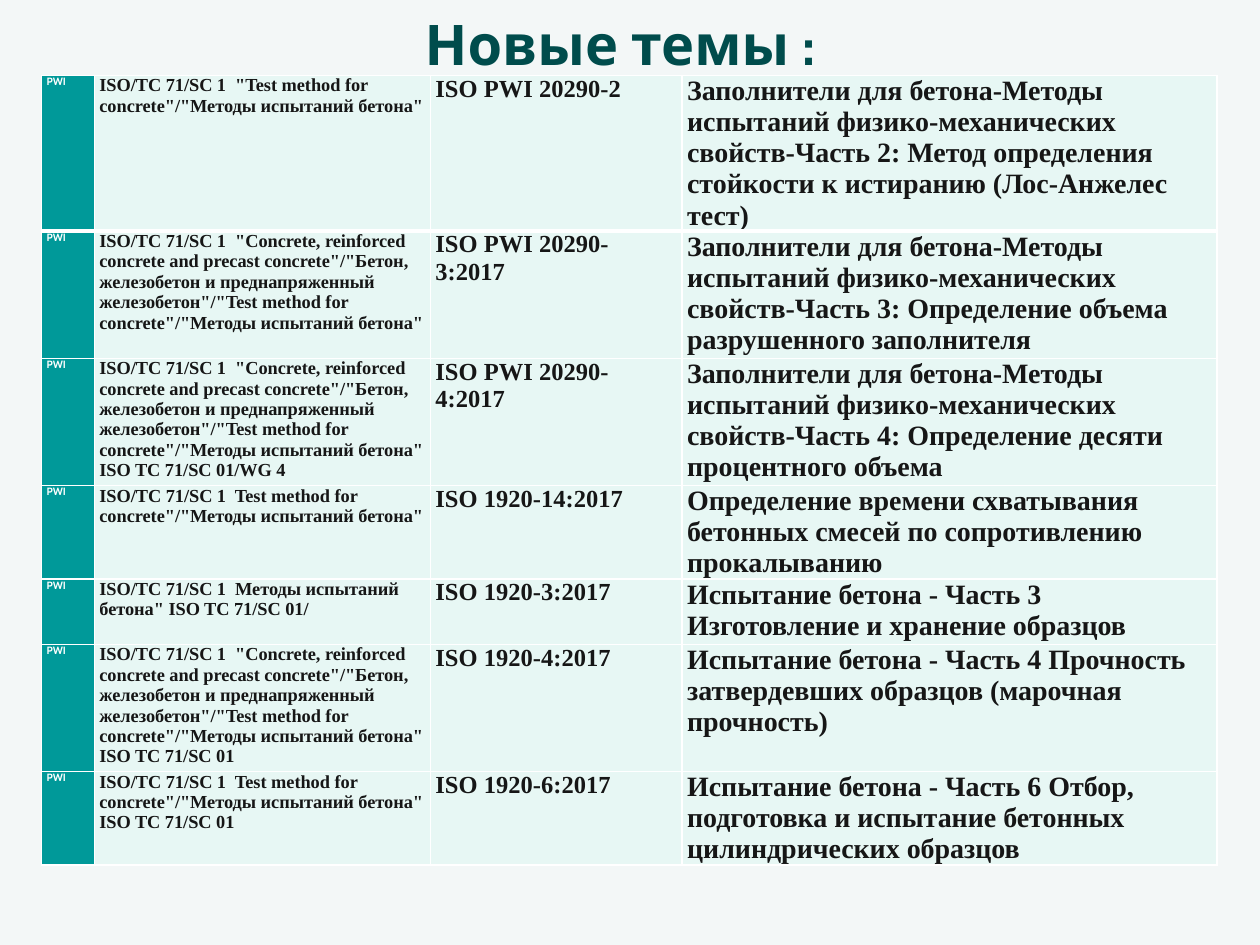
import pptx
import pptx.dml.color
import pptx.enum.text
import pptx.oxml
import pptx.oxml.ns
import pptx.util
from dataclasses import dataclass


@dataclass(frozen=True)
class Theme:
    back: str = "F3F7F7"
    title: str = "004C4C"
    mark: str = "009999"
    pale: str = "E7F7F4"
    ink: str = "161616"
    white: str = "FFFFFF"
    sans: str = "Cabin"
    serif: str = "Times New Roman"
    head: float = 32
    sizes: tuple = (6, 10.5, 14, 16)
    thin: float = 1
    thick: float = 3


THEME = Theme()
WIDE, HIGH = 10, 7.5
COLS = (0.42, 2.67, 2, 4.25)
ROWS = (1.18, 1.01, 1.01, 0.52, 0.52, 1.01, 0.48)

# Wording shared by several rows
GROUP = "ISO/TC 71/SC 1  "
TESTS = 'Test method for concrete"/"Методы испытаний бетона"'
FULL = (GROUP + '"Concrete, reinforced concrete and precast concrete"/"Бетон, '
        'железобетон и преднапряженный железобетон"/"' + TESTS)
STONE = "Заполнители для бетона-Методы испытаний физико-механических свойств-Часть "
TRIAL = "Испытание бетона - Часть "

TOPICS = (
    (GROUP + '"' + TESTS, "ISO PWI 20290-2",
     STONE + "2: Метод определения стойкости к истиранию (Лос-Анжелес тест)"),
    (FULL, "ISO PWI 20290-3:2017",
     STONE + "3: Определение объема разрушенного заполнителя"),
    (FULL + " ISO TC 71/SC 01/WG 4", "ISO PWI 20290-4:2017",
     STONE + "4: Определение десяти процентного объема"),
    (GROUP + TESTS, "ISO 1920-14:2017",
     "Определение времени схватывания бетонных смесей по сопротивлению прокалыванию"),
    (GROUP + 'Методы испытаний бетона" ISO TC 71/SC 01/', "ISO 1920-3:2017",
     TRIAL + "3 Изготовление и хранение образцов"),
    (FULL + " ISO TC 71/SC 01", "ISO 1920-4:2017",
     TRIAL + "4 Прочность затвердевших образцов (марочная прочность)"),
    (GROUP + TESTS + " ISO TC 71/SC 01", "ISO 1920-6:2017",
     TRIAL + "6 Отбор, подготовка и испытание бетонных цилиндрических образцов"),
)


def paint(fill, tone):
    fill.solid()
    fill.fore_color.rgb = pptx.dml.color.RGBColor.from_string(tone)


def style(frame, size, face, tone):
    for run in frame.paragraphs[0].runs:
        run.font.size = pptx.util.Pt(size)
        run.font.name = face
        run.font.bold = True
        run.font.color.rgb = pptx.dml.color.RGBColor.from_string(tone)


def edge(cell, side, width):
    line = pptx.oxml.parse_xml(
        f'<a:ln{side} {pptx.oxml.ns.nsdecls("a")} w="{pptx.util.Pt(width)}">'
        f'<a:solidFill><a:srgbClr val="{THEME.white}"/></a:solidFill></a:ln{side}>')
    cell._tc.get_or_add_tcPr().append(line)


def add_title(slide, box):
    title = slide.shapes.title
    title.left, title.top, title.width, title.height = box
    frame = title.text_frame
    frame.text = "Новые темы :"
    frame.word_wrap = True
    frame.vertical_anchor = pptx.enum.text.MSO_ANCHOR.MIDDLE
    frame.paragraphs[0].alignment = pptx.enum.text.PP_ALIGN.CENTER
    style(frame, THEME.head, THEME.sans, THEME.title)


def fill_cell(cell, text, row, col):
    # Borders go before the fill; a thick rule closes the first row
    for side in "LRTB":
        heavy = (row, side) in ((0, "B"), (1, "T"))
        edge(cell, side, THEME.thick if heavy else THEME.thin)
    paint(cell.fill, THEME.pale if col else THEME.mark)
    cell.margin_left = cell.margin_right = pptx.util.Inches(0.04)
    cell.margin_top = cell.margin_bottom = 0
    cell.text_frame.text = text
    style(cell.text_frame, THEME.sizes[col],
          THEME.serif if col else THEME.sans,
          THEME.ink if col else THEME.white)


def add_topics(slide, box):
    left, top, width, height = box
    frame = slide.shapes.add_table(len(ROWS), len(COLS), *box)
    table = frame.table
    table.first_row = table.horz_banding = False
    for col, share in zip(table.columns, COLS):
        col.width = int(width * share / sum(COLS))
    for row, size in zip(table.rows, ROWS):
        row.height = pptx.util.Inches(size)
    frame.height = height
    for r, topic in enumerate(TOPICS):
        for c, text in enumerate(("PWI", *topic)):
            fill_cell(table.cell(r, c), text, r, c)


def main():
    deck = pptx.Presentation()
    deck.slide_width = pptx.util.Inches(WIDE)
    deck.slide_height = pptx.util.Inches(HIGH)
    slide = deck.slides.add_slide(deck.slide_layouts[0])
    paint(slide.background.fill, THEME.back)

    # The subtitle is not used
    spare = slide.placeholders[1].element
    spare.getparent().remove(spare)

    def area(*sides):
        return [pptx.util.Inches(side) for side in sides]

    add_topics(slide, area(0.33, 0.6, 9.33, 6.65))
    add_title(slide, area(1.17, 0.01, 7.5, 0.66))
    deck.save("out.pptx")


if __name__ == "__main__":
    main()
